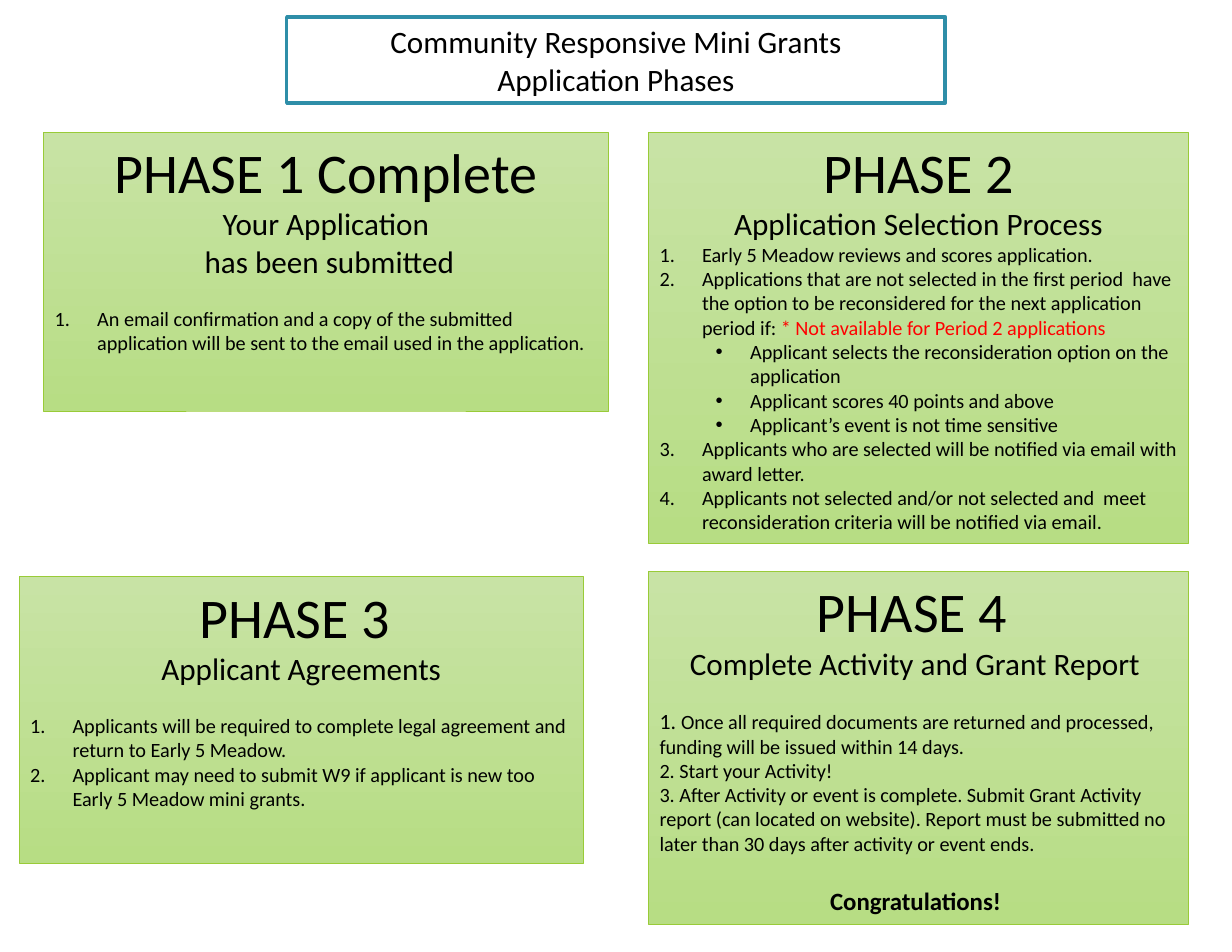
import pptx
import pptx.util
import pptx.dml.color
import pptx.enum.shapes
import pptx.enum.text
import pptx.oxml.ns
import lxml.etree

Pt = pptx.util.Pt
Align = pptx.enum.text.PP_ALIGN
Anchor = pptx.enum.text.MSO_ANCHOR

HUES = {
    "ink": "000000",
    "note": "FF0000",
    "paper": "FFFFFF",
    "frame": "2E8EA8",
    "edge": "99CB38",
    "light": "C8E3A5",
    "deep": "B7DD84",
}

KINDS = {
    "head": {"size": 36, "align": Align.CENTER},
    "sub": {"size": 20, "align": Align.CENTER},
    "step": {"size": 13, "mark": ("buAutoNum", "type", "arabicPeriod"), "dent": (0.38, 0.38)},
    "dot": {"size": 13, "level": 1, "mark": ("buChar", "char", "•"), "dent": (0.81, 0.31)},
    "text": {"size": 13},
    "close": {"size": 16, "align": Align.CENTER, "bold": True},
}

PHASES = [
    ((3.9, 11.8, 50.4, 24.9), [
        ("head", 0, [("PHASE 1 Complete",)]),
        ("sub", 0, [("Your Application",)]),
        ("sub", 0, [(" has been submitted",)]),
        ("step", 17, [("An email confirmation and a copy of the submitted application "
                       "will be sent to the email used in the application.",)]),
    ]),
    ((57.9, 11.8, 48.2, 36.7), [
        ("head", 0, [("PHASE 2",)]),
        ("sub", 0, [("Application Selection Process",)]),
        ("step", 0, [("Early 5 Meadow reviews and scores application.",)]),
        ("step", 0, [("Applications that are not selected in the first period  have the option "
                      "to be reconsidered for the next application period if: ",),
                     ("* Not available for Period 2 applications", "note")]),
        ("dot", 0, [("Applicant selects the reconsideration option on the application",)]),
        ("dot", 0, [("Applicant scores 40 points and above",)]),
        ("dot", 0, [("Applicant’s event is not time sensitive",)]),
        ("step", 0, [("Applicants who are selected will be notified via email "
                      "with award letter.",)]),
        ("step", 0, [("Applicants not selected and/or not selected and  meet reconsideration "
                      "criteria will be notified via email.",)]),
    ]),
    ((1.7, 51.5, 50.4, 25.6), [
        ("head", 0, [("PHASE 3 ",)]),
        ("sub", 0, [("Applicant Agreements",)]),
        ("step", 17, [("Applicants will be required to complete legal agreement "
                       "and return to Early 5 Meadow.",)]),
        ("step", 0, [("Applicant may need to submit W9 if applicant is new too "
                      "Early 5 Meadow mini grants.",)]),
    ]),
    ((57.9, 51, 48.2, 31.5), [
        ("head", 0, [("PHASE 4 ",)]),
        ("sub", 0, [("Complete Activity and Grant Report ",)]),
        ("text", 17, [("1. ", "ink", 14),
                      ("Once all required documents are returned and processed, "
                       "funding will be issued within 14 days.",)]),
        ("text", 0, [("2. Start your Activity!",)]),
        ("text", 0, [("3. After Activity or event is complete. Submit Grant Activity report "
                      "(can located on website). Report must be submitted no later than "
                      "30 days after activity or event ends.",)]),
        ("close", 19.5, [("Congratulations! ",)]),
    ]),
]


class Deck:
    font = "Calibri"
    cols, rows = 110, 85

    def __init__(self, wide, high):
        self.show = pptx.Presentation()
        self.show.slide_width = pptx.util.Inches(wide)
        self.show.slide_height = pptx.util.Inches(high)
        self.slide = self.show.slides.add_slide(self.show.slide_layouts[5])

    def hue(self, name):
        return pptx.dml.color.RGBColor.from_string(HUES[name])

    def dress(self, item, values):
        for key, value in values.items():
            setattr(item, key, value)

    def area(self, spot):
        wide = self.show.slide_width / self.cols
        high = self.show.slide_height / self.rows
        return [round(n * unit) for n, unit in zip(spot, (wide, high, wide, high))]

    def edge(self, shape, name, width):
        shape.line.color.rgb = self.hue(name)
        shape.line.width = Pt(width)

    def mark(self, para, mark, dent):
        left, hang = (pptx.util.Inches(n) for n in dent)
        props = para._p.get_or_add_pPr()
        props.set("marL", str(left))
        props.set("indent", str(-hang))
        tag, key, value = mark
        face = lxml.etree.SubElement(props, pptx.oxml.ns.qn("a:buFont"))
        face.set("typeface", "Arial" if tag == "buChar" else "+mj-lt")
        lxml.etree.SubElement(props, pptx.oxml.ns.qn("a:" + tag)).set(key, value)

    def piece(self, para, form, words, name="ink", size=None):
        run = para.add_run()
        run.text = words
        self.dress(run.font, {
            "name": self.font,
            "size": Pt(size or form["size"]),
            "bold": form.get("bold", False),
        })
        run.font.color.rgb = self.hue(name)

    def text(self, shape, paras, anchor):
        frame = shape.text_frame
        self.dress(frame, {
            "word_wrap": True,
            "auto_size": pptx.enum.text.MSO_AUTO_SIZE.NONE,
            "vertical_anchor": anchor,
        })
        for num, (kind, gap, parts) in enumerate(paras):
            form = KINDS[kind]
            para = frame.add_paragraph() if num else frame.paragraphs[0]
            self.dress(para, {
                "alignment": form.get("align", Align.LEFT),
                "level": form.get("level", 0),
                "space_before": Pt(gap),
            })
            if "mark" in form:
                self.mark(para, form["mark"], form["dent"])
            for part in parts:
                self.piece(para, form, *part)

    def title(self, spot, lines):
        shape = self.slide.shapes.title
        self.dress(shape, dict(zip(("left", "top", "width", "height"), self.area(spot))))
        shape.fill.solid()
        shape.fill.fore_color.rgb = self.hue("paper")
        self.edge(shape, "frame", 2.25)
        self.text(shape, [("sub", 0, [(words,)]) for words in lines], Anchor.MIDDLE)

    def card(self, spot, paras):
        kind = pptx.enum.shapes.MSO_SHAPE.RECTANGLE
        shape = self.slide.shapes.add_shape(kind, *self.area(spot))
        shape.shadow.inherit = False
        shape.fill.gradient()
        shape.fill.gradient_angle = 270
        for stop, name in zip(shape.fill.gradient_stops, ("light", "deep")):
            stop.color.rgb = self.hue(name)
        self.edge(shape, "edge", 0.5)
        self.text(shape, paras, Anchor.TOP)


def main():
    deck = Deck(11, 8.5)
    deck.title((25.6, 1.5, 58.8, 7.7),
               ["Community Responsive Mini Grants", "Application Phases"])
    for spot, paras in PHASES:
        deck.card(spot, paras)
    deck.show.save("out.pptx")


if __name__ == "__main__":
    main()
